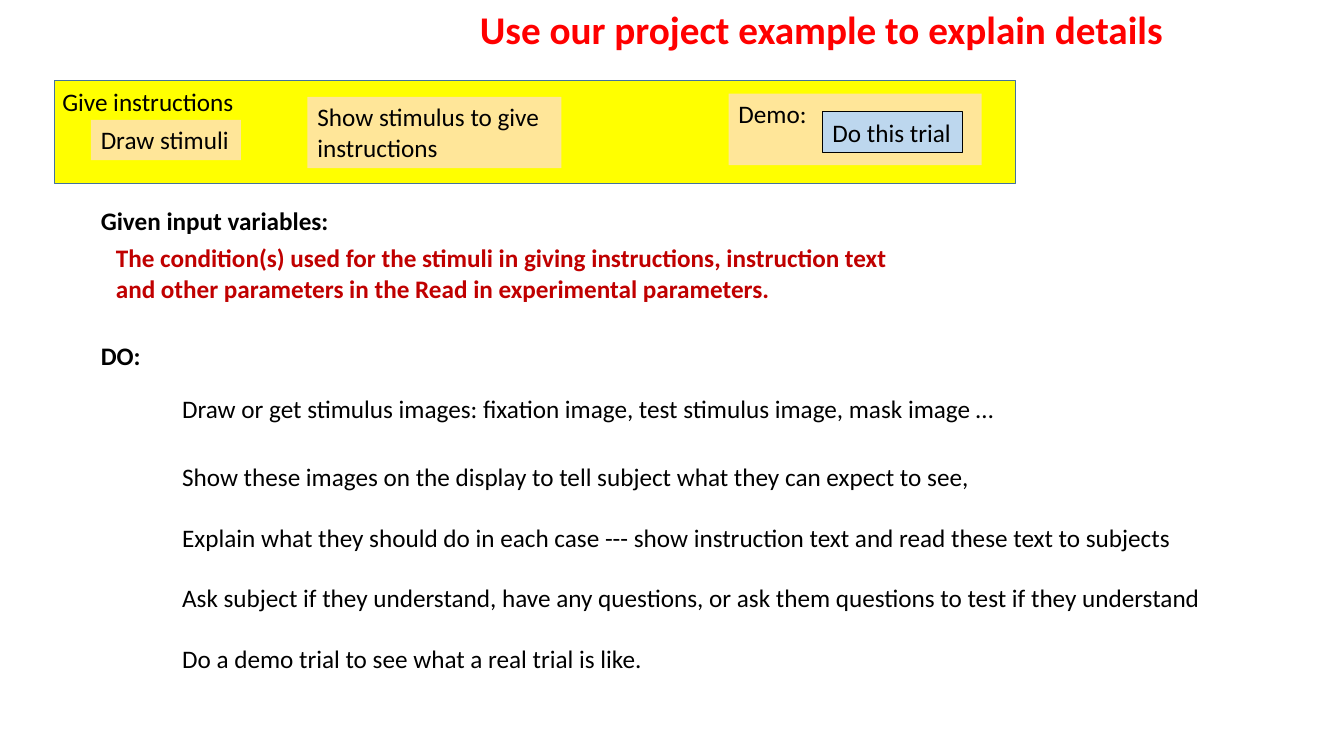
from dataclasses import dataclass

from pptx import Presentation
from pptx.dml.color import RGBColor
from pptx.enum.shapes import MSO_SHAPE as Shape
from pptx.enum.text import MSO_ANCHOR as Anchor, MSO_AUTO_SIZE as AutoSize, PP_ALIGN as Align
from pptx.util import Cm, Pt


@dataclass(frozen=True)
class Theme:
    font: str = "Calibri"
    title_size: int = 28
    body_size: int = 18
    black: str = "000000"
    title_red: str = "FF0000"
    dark_red: str = "C00000"
    panel: str = "FFFF00"
    panel_line: str = "43739E"
    step: str = "FFE699"
    trial: str = "BDD7EE"


class SlideBuilder:
    def __init__(self, presentation, theme):
        self.theme = theme
        self.slide = presentation.slides.add_slide(presentation.slide_layouts[5])
        self.shapes = self.slide.shapes

    def fill_text(self, shape, lines, size=None, color=None, bold=False, wrap=False, gap=0):
        frame = shape.text_frame
        frame_format = {"word_wrap": wrap, "auto_size": AutoSize.SHAPE_TO_FIT_TEXT,
                        "vertical_anchor": Anchor.TOP}
        for name, value in frame_format.items():
            setattr(frame, name, value)
        frame.text = "\n".join(lines)
        paragraph_format = {"alignment": Align.LEFT, "line_spacing": 1.0,
                            "space_before": Pt(0)}
        font_format = {"name": self.theme.font, "bold": bold,
                       "size": Pt(size or self.theme.body_size)}
        for index, paragraph in enumerate(frame.paragraphs):
            for name, value in paragraph_format.items():
                setattr(paragraph, name, value)
            paragraph.space_after = Pt(gap if index < len(lines) - 1 else 0)
            font = paragraph.runs[0].font
            for name, value in font_format.items():
                setattr(font, name, value)
            font.color.rgb = RGBColor.from_string(color or self.theme.black)

    def title(self, place, text):
        title = self.slide.shapes.title
        for name, value in zip(("left", "top", "width", "height"), place):
            setattr(title, name, Cm(value))
        self.fill_text(title, [text], self.theme.title_size, self.theme.title_red, bold=True)

    def text(self, place, *lines, **style):
        self.fill_text(self.shapes.add_textbox(*map(Cm, place)), lines, **style)

    def box(self, place, fill, text=None, line=None, line_width=1, wrap=False):
        box = self.shapes.add_shape(Shape.RECTANGLE, *map(Cm, place))
        box.shadow.inherit = False
        box.fill.solid()
        box.fill.fore_color.rgb = RGBColor.from_string(fill)
        if line:
            box.line.color.rgb = RGBColor.from_string(line)
            box.line.width = Pt(line_width)
        else:
            box.line.fill.background()
        if text:
            self.fill_text(box, [text], wrap=wrap)

    def start_group(self):
        self.shapes = self.slide.shapes.add_group_shape().shapes

    def end_group(self):
        self.shapes = self.slide.shapes


def main():
    presentation = Presentation()
    presentation.slide_width, presentation.slide_height = Cm(33.87), Cm(19.05)
    theme = Theme()
    builder = SlideBuilder(presentation, theme)
    builder.title((11.84, 0, 17.93, 1.45), "Use our project example to explain details")

    builder.start_group()
    builder.box((1.37, 2.03, 24.23, 2.59), theme.panel, line=theme.panel_line)
    builder.text((1.32, 2.06, 4.88, 1.02), "Give instructions")
    builder.box((2.29, 3.02, 3.78, 1.02), theme.step, "Draw stimuli")
    builder.box((7.75, 2.44, 6.4, 1.8), theme.step,
                "Show stimulus to give instructions", wrap=True)
    builder.box((18.36, 2.36, 6.38, 1.8), theme.step, "Demo:", wrap=True)
    builder.box((20.73, 2.82, 3.53, 1.02), theme.trial, "Do this trial",
                line=theme.black, line_width=0.75)
    builder.end_group()

    builder.text((2.29, 5.05, 6.6, 1.02), "Given input variables:", bold=True)
    builder.text((2.67, 5.99, 20.09, 1.8),
                 "The condition(s) used for the stimuli in giving instructions, instruction text",
                 "and other parameters in the Read in experimental parameters.",
                 color=theme.dark_red, bold=True)
    builder.text((2.29, 8.46, 1.83, 1.02), "DO:", bold=True)
    builder.text((4.34, 9.78, 21.26, 1.02),
                 "Draw or get stimulus images: fixation image, test stimulus image, mask image …")
    builder.text((4.34, 11.51, 26.47, 5.64),
                 "Show these images on the display to tell subject what they can expect to see,",
                 "Explain what they should do in each case --- show instruction text and read "
                 "these text to subjects",
                 "Ask subject if they understand, have any questions, or ask them questions to "
                 "test if they understand",
                 "Do a demo trial to see what a real trial is like.",
                 gap=21.6)
    presentation.save("out.pptx")


if __name__ == "__main__":
    main()
